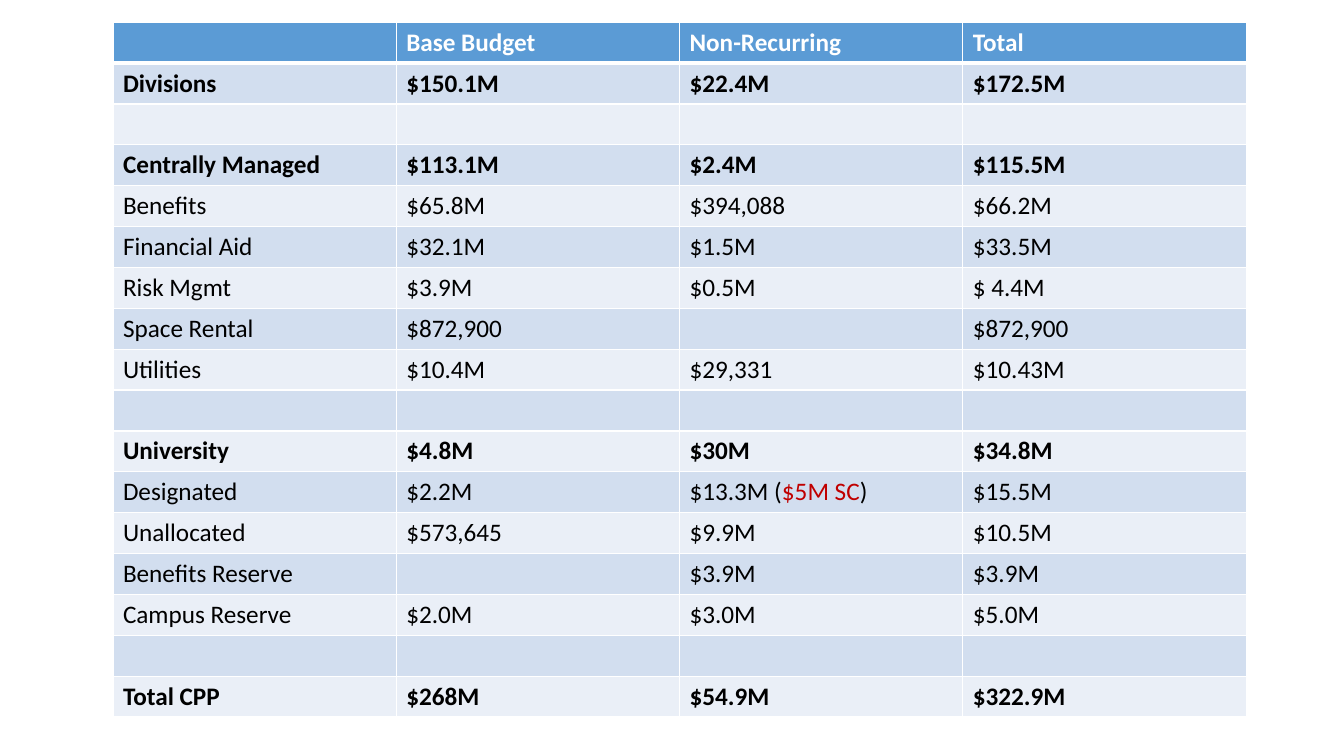
from lxml.etree import SubElement
from pptx import Presentation
from pptx.dml.color import RGBColor
from pptx.oxml.ns import qn
from pptx.util import Inches, Pt

COLORS = {
    "header": "5B9BD5",
    "band_dark": "D2DEEF",
    "band_light": "EAEFF7",
    "rule": "FFFFFF",
    "header_text": "FFFFFF",
    "body_text": "000000",
    "highlight": "C00000",
}
FONT = "Calibri"
HIGHLIGHTED = "$5M SC"
BOLD_LABELS = {"Divisions", "Centrally Managed", "University", "Total CPP"}

HEADINGS = ("", "Base Budget", "Non-Recurring", "Total")
SPACER = ("", "", "", "")
BUDGET = [
    ("Divisions", "$150.1M", "$22.4M", "$172.5M"),
    SPACER,
    ("Centrally Managed", "$113.1M", "$2.4M", "$115.5M"),
    ("Benefits", "$65.8M", "$394,088", "$66.2M"),
    ("Financial Aid", "$32.1M", "$1.5M", "$33.5M"),
    ("Risk Mgmt", "$3.9M", "$0.5M", "$ 4.4M"),
    ("Space Rental", "$872,900", "", "$872,900"),
    ("Utilities", "$10.4M", "$29,331", "$10.43M"),
    SPACER,
    ("University", "$4.8M", "$30M", "$34.8M"),
    ("Designated", "$2.2M", f"$13.3M ({HIGHLIGHTED})", "$15.5M"),
    ("Unallocated", "$573,645", "$9.9M", "$10.5M"),
    ("Benefits Reserve", "", "$3.9M", "$3.9M"),
    ("Campus Reserve", "$2.0M", "$3.0M", "$5.0M"),
    SPACER,
    ("Total CPP", "$268M", "$54.9M", "$322.9M"),
]


def rgb(name):
    return RGBColor.from_string(COLORS[name])


def set_borders(cell, top=1, bottom=1):
    """Rule all four sides; called before the fill, which must follow the lines."""
    properties = cell._tc.get_or_add_tcPr()
    for side, points in (("L", 1), ("R", 1), ("T", top), ("B", bottom)):
        line = SubElement(properties, qn(f"a:ln{side}"), w=str(Pt(points)))
        solid = SubElement(line, qn("a:solidFill"))
        SubElement(solid, qn("a:srgbClr"), val=COLORS["rule"])


def write_amount(cell, text, color, bold):
    paragraph = cell.text_frame.paragraphs[0]
    before, highlighted, after = text.partition(HIGHLIGHTED)
    for part in filter(None, (before, highlighted, after)):
        run = paragraph.add_run()
        run.text = part
        if part == HIGHLIGHTED:
            run.font.color.rgb = rgb("highlight")
    paragraph.font.name = FONT
    paragraph.font.size = Pt(18)
    paragraph.font.bold = bold
    paragraph.font.color.rgb = rgb(color)


def add_budget_table(slide, left, top, width, height):
    rows = [HEADINGS, *BUDGET]
    table = slide.shapes.add_table(
        len(rows), len(HEADINGS), left, top, width, height).table
    table.first_row = table.horz_banding = False
    for column in table.columns:
        column.width = int(width / len(HEADINGS))

    for row_index, row in enumerate(rows):
        is_header = row_index == 0
        band = "band_dark" if row_index % 2 else "band_light"
        for column_index, text in enumerate(row):
            cell = table.cell(row_index, column_index)
            # Thick rule between the header and the first row
            set_borders(cell, top=3 if row_index == 1 else 1,
                        bottom=3 if is_header else 1)
            cell.fill.solid()
            cell.fill.fore_color.rgb = rgb("header" if is_header else band)
            write_amount(cell, text,
                         "header_text" if is_header else "body_text",
                         is_header or row[0] in BOLD_LABELS)


def main():
    deck = Presentation()
    deck.slide_width, deck.slide_height = Inches(13.33), Inches(7.5)
    slide = deck.slides.add_slide(deck.slide_layouts[6])
    add_budget_table(slide, Inches(1.12), Inches(0.22), Inches(11.24), Inches(6.81))
    deck.save("out.pptx")


if __name__ == "__main__":
    main()
